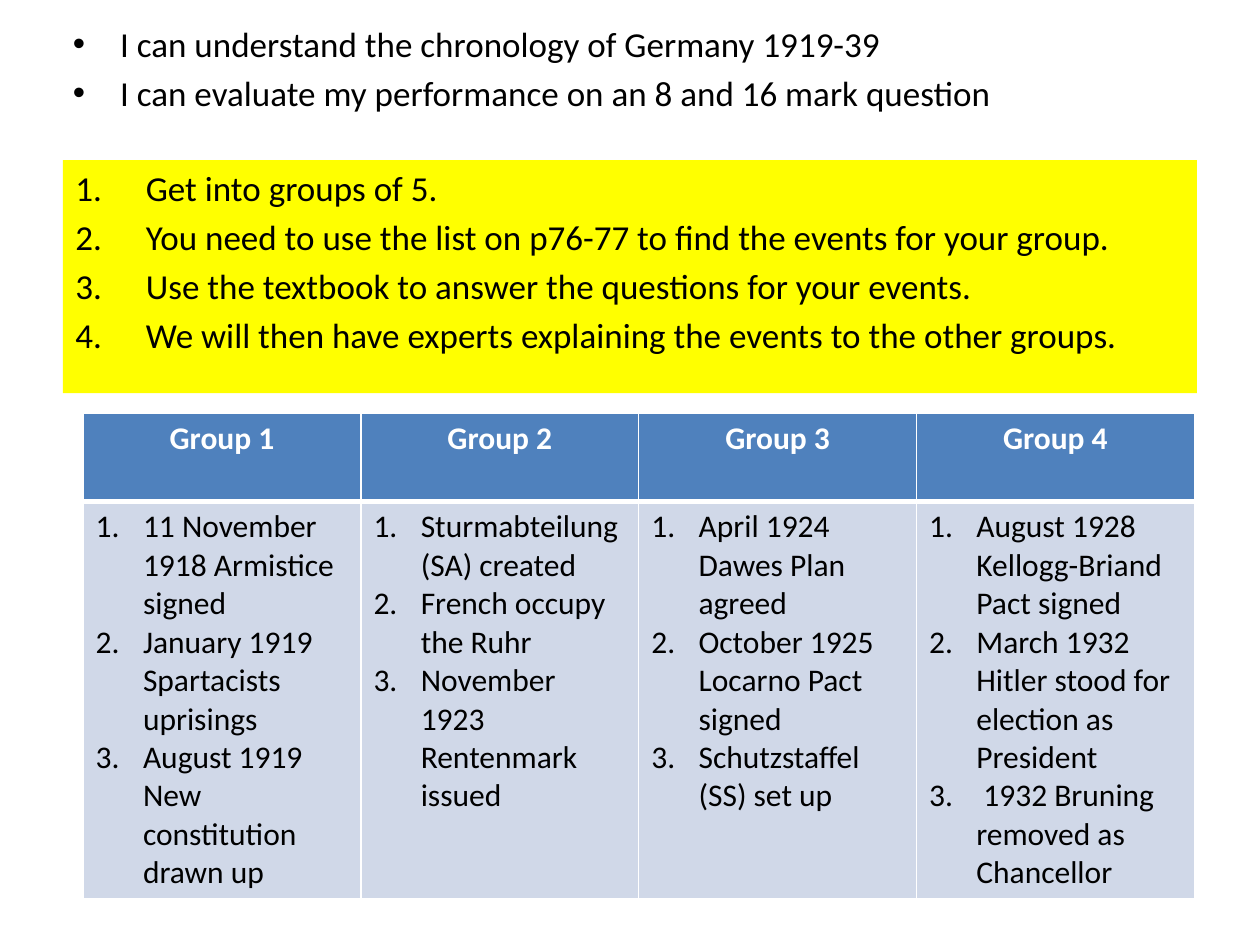
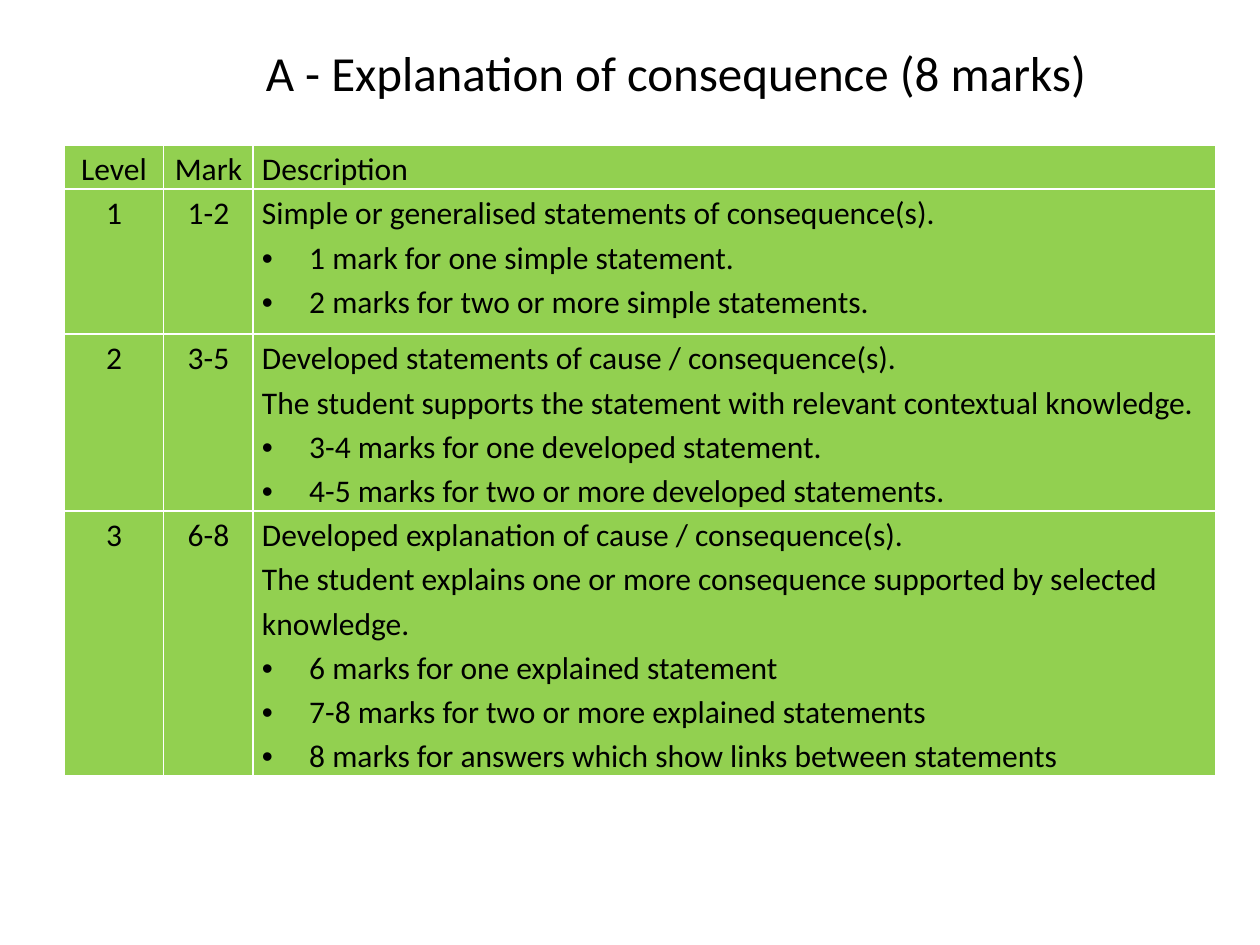
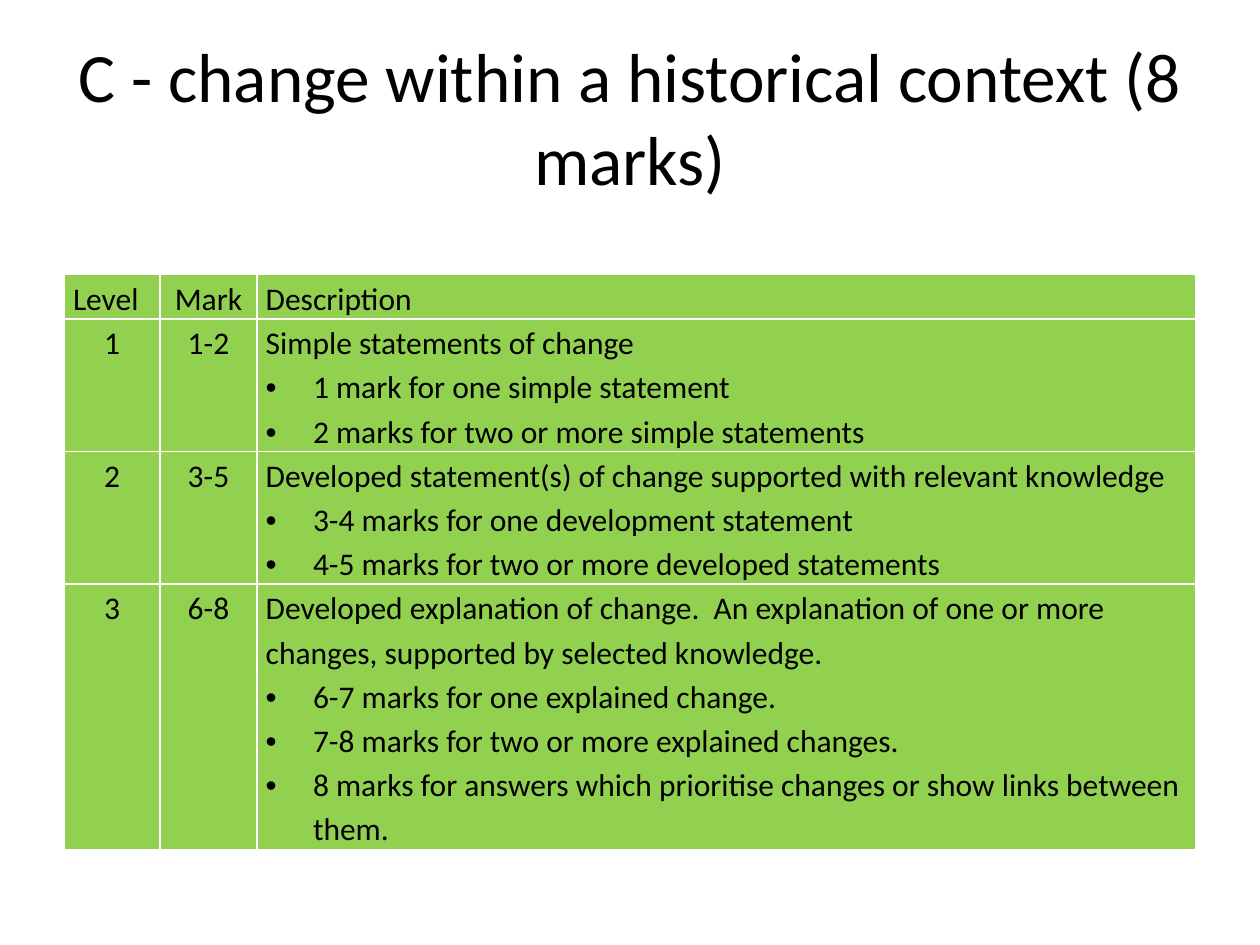
from dataclasses import dataclass
from typing import NamedTuple

from lxml.etree import SubElement as Sub
from pptx import Presentation
from pptx.dml.color import RGBColor as Rgb
from pptx.enum.text import MSO_ANCHOR as Anchor, MSO_AUTO_SIZE as Fit, PP_ALIGN as Align
from pptx.oxml.ns import qn
from pptx.util import Inches, Pt

WIDE, HIGH = Inches(10), Inches(7.5)
COLS, ROWS = 100, 75
TITLE_ONLY, BLANK = 5, 6


@dataclass(frozen=True)
class Theme:
    font: str = "Calibri"
    ink: Rgb = Rgb(0, 0, 0)
    white: Rgb = Rgb(255, 255, 255)
    yellow: Rgb = Rgb(255, 255, 0)
    blue: Rgb = Rgb(0x4F, 0x81, 0xBD)
    pale: Rgb = Rgb(0xD0, 0xD8, 0xE8)
    green: Rgb = Rgb(0x92, 0xD0, 0x50)
    large: float = 39.6
    head: float = 28
    body: float = 20
    small: float = 18


class Box(NamedTuple):
    left: float
    top: float
    width: float
    height: float


class Line(NamedTuple):
    text: str
    mark: str = ""


class Style(NamedTuple):
    size: float
    color: Rgb
    bold: bool = False
    align: Align = Align.LEFT
    before: float = 0
    space: float = 1
    indent: float = 3.75


@dataclass(frozen=True)
class Grid:
    left: float
    top: float
    cols: list[float]
    rows: list[float]


@dataclass(frozen=True)
class Level:
    name: str
    marks: str
    lead: list[str]
    points: list[str]


LOOK = Theme()
BODY = Style(LOOK.body, LOOK.ink, before=4)
CELL = Style(LOOK.small, LOOK.ink)
HEAD = Style(LOOK.small, LOOK.white, True, Align.CENTER)
LEFT = CELL._replace(space=1.15)
MID = LEFT._replace(align=Align.CENTER)

GOALS = [
    "I can understand the chronology of Germany 1919-39",
    "I can evaluate my performance on an 8 and 16 mark question",
]
STEPS = [
    "Get into groups of 5.",
    "You need to use the list on p76-77 to find the events for your group.",
    "Use the textbook to answer the questions for your events.",
    "We will then have experts explaining the events to the other groups.",
]
GROUPS = [
    ["11 November 1918 Armistice signed", "January 1919 Spartacists uprisings",
     "August 1919 New constitution drawn up"],
    ["Sturmabteilung (SA) created", "French occupy the Ruhr",
     "November 1923 Rentenmark issued"],
    ["April 1924 Dawes Plan agreed", "October 1925 Locarno Pact signed",
     "Schutzstaffel (SS) set up"],
    ["August 1928 Kellogg-Briand Pact signed",
     "March 1932 Hitler stood for election as President",
     " 1932 Bruning removed as Chancellor"],
]
EFFECT = [
    Level("1", "1-2", ["Simple or generalised statements of consequence(s)."],
          ["1 mark for one simple statement.",
           "2 marks for two or more simple statements."]),
    Level("2", "3-5", ["Developed statements of cause / consequence(s).",
                       "The student supports the statement with relevant contextual knowledge."],
          ["3-4 marks for one developed statement.",
           "4-5 marks for two or more developed statements."]),
    Level("3", "6-8", ["Developed explanation of cause / consequence(s).",
                       "The student explains one or more consequence supported by selected knowledge."],
          ["6 marks for one explained statement",
           "7-8 marks for two or more explained statements",
           "8 marks for answers which show links between statements"]),
]
CHANGE = [
    Level("1", "1-2", ["Simple statements of change"],
          ["1 mark for one simple statement",
           "2 marks for two or more simple statements"]),
    Level("2", "3-5", ["Developed statement(s) of change supported with relevant knowledge"],
          ["3-4 marks for one development statement",
           "4-5 marks for two or more developed statements"]),
    Level("3", "6-8", ["Developed explanation of change.  An explanation of one or more "
                       "changes, supported by selected knowledge."],
          ["6-7 marks for one explained change.",
           "7-8 marks for two or more explained changes.",
           "8 marks for answers which prioritise changes or show links between them."]),
]


def across(cols: float) -> int:
    return round(WIDE * cols / COLS)


def down(rows: float) -> int:
    return round(HIGH * rows / ROWS)


def place(box: Box) -> tuple[int, int, int, int]:
    return across(box.left), down(box.top), across(box.width), down(box.height)


def dots(texts: list[str]) -> list[Line]:
    return [Line(text, "•") for text in texts]


def steps(texts: list[str]) -> list[Line]:
    return [Line(text, "1.") for text in texts]


def add_mark(para, mark: str, indent: float) -> None:
    props = para._p.get_or_add_pPr()
    props.set("marL", str(across(indent)))
    props.set("indent", str(-across(indent)))
    if mark == "1.":
        Sub(props, qn("a:buFont"), typeface="+mj-lt")
        Sub(props, qn("a:buAutoNum"), type="arabicPeriod")
    else:
        Sub(props, qn("a:buFont"), typeface="Arial")
        Sub(props, qn("a:buChar"), char=mark)


def write(frame, lines: list[Line], style: Style) -> None:
    for spot, line in enumerate(lines):
        para = frame.add_paragraph() if spot else frame.paragraphs[0]
        para.text = line.text
        para.alignment = style.align
        para.space_before = Pt(style.before)
        para.line_spacing = style.space
        font = para.font
        font.name, font.size, font.bold = LOOK.font, Pt(style.size), style.bold
        font.color.rgb = style.color
        if line.mark:
            add_mark(para, line.mark, style.indent)


def add_text(slide, box: Box, lines: list[Line], style: Style, fill: Rgb | None = None) -> None:
    shape = slide.shapes.add_textbox(*place(box))
    if fill is not None:
        shape.fill.solid()
        shape.fill.fore_color.rgb = fill
    shape.text_frame.word_wrap = True
    write(shape.text_frame, lines, style)


def set_title(slide, box: Box, text: str, style: Style, anchor: Anchor, wrap: bool) -> None:
    title = slide.shapes.title
    title.left, title.top, title.width, title.height = place(box)
    frame = title.text_frame
    frame.auto_size, frame.word_wrap, frame.vertical_anchor = Fit.NONE, wrap, anchor
    write(frame, [Line(text)], style)


def add_edge(cell, side: str, width: float) -> None:
    edge = Sub(cell._tc.get_or_add_tcPr(), qn(f"a:ln{side}"), w=str(Pt(width)))
    Sub(Sub(edge, qn("a:solidFill")), qn("a:srgbClr"), val=str(LOOK.white))


def fill_cell(cell, lines: list[Line], style: Style, fill: Rgb,
              top: float = 1, base: float = 1) -> None:
    for side, width in zip("LRTB", (1, 1, top, base)):
        add_edge(cell, side, width)
    cell.fill.solid()
    cell.fill.fore_color.rgb = fill
    write(cell.text_frame, lines, style)


def add_grid(slide, grid: Grid):
    box = Box(grid.left, grid.top, sum(grid.cols), sum(grid.rows))
    table = slide.shapes.add_table(len(grid.rows), len(grid.cols), *place(box)).table
    table.first_row = table.horz_banding = False
    for col, width in zip(table.columns, grid.cols):
        col.width = across(width)
    for row, height in zip(table.rows, grid.rows):
        row.height = down(height)
    return table


def add_levels(slide, grid: Grid, levels: list[Level], first: Style) -> None:
    table = add_grid(slide, grid)
    heads = [[Line(text)] for text in ("Level", "Mark", "Description")]
    data = [([Line(level.name)], [Line(level.marks)],
             [Line(text) for text in level.lead] + dots(level.points)) for level in levels]
    for r, row in enumerate([heads, *data]):
        for c, (lines, style) in enumerate(zip(row, (MID, MID, LEFT))):
            cell = table.cell(r, c)
            cell.margin_left = cell.margin_right = across(0.7)
            cell.margin_top = cell.margin_bottom = 0
            fill_cell(cell, lines, first if r == c == 0 else style, LOOK.green)


def add_groups(slide) -> None:
    table = add_grid(slide, Grid(6.6, 32.8, [88.2 / len(GROUPS)] * len(GROUPS), [7, 31.5]))
    for c, events in enumerate(GROUPS):
        fill_cell(table.cell(0, c), [Line(f"Group {c + 1}")], HEAD, LOOK.blue, base=3)
        fill_cell(table.cell(1, c), steps(events), CELL, LOOK.pale, top=3)


def main() -> None:
    deck = Presentation()
    deck.slide_width, deck.slide_height = WIDE, HIGH

    tasks = deck.slides.add_slide(deck.slide_layouts[BLANK])
    add_text(tasks, Box(5, 12.7, 90, 18.5), steps(STEPS), BODY._replace(indent=5.6), LOOK.yellow)
    add_text(tasks, Box(4.8, 1.3, 90, 11.3), dots(GOALS), BODY)
    add_groups(tasks)

    effect = deck.slides.add_slide(deck.slide_layouts[TITLE_ONLY])
    set_title(effect, Box(20.1, 2.9, 68.8, 5.7), "A - Explanation of consequence (8 marks)",
              Style(LOOK.head, LOOK.ink), Anchor.TOP, False)
    add_levels(effect, Grid(5.1, 11.5, [7.9, 7.1, 76.4], [3.5, 11.5, 14, 21]), EFFECT, MID)

    change = deck.slides.add_slide(deck.slide_layouts[TITLE_ONLY])
    set_title(change, Box(5, 3, 90, 12.5), "C - change within a historical context (8 marks)",
              Style(LOOK.large, LOOK.ink, align=Align.CENTER), Anchor.MIDDLE, True)
    add_levels(change, Grid(5.1, 21.8, [7.6, 7.7, 74.5], [3.5, 10.5, 10.5, 21]), CHANGE, LEFT)

    deck.save("out.pptx")


if __name__ == "__main__":
    main()
